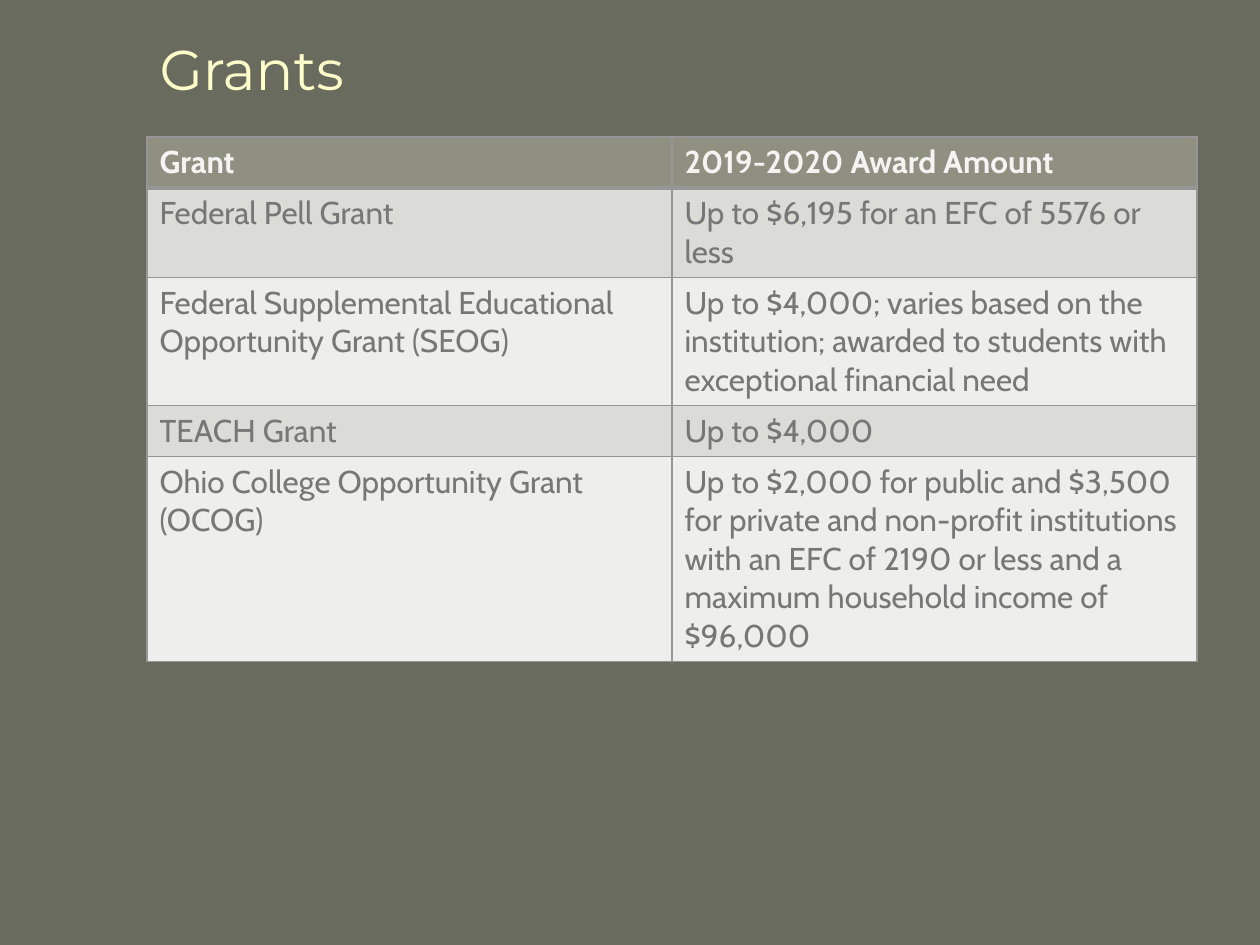
import dataclasses

import pptx
import pptx.dml.color
import pptx.enum.text
import pptx.oxml
import pptx.oxml.ns
import pptx.util

PX = 914400 / 126
WIDTH, HEIGHT = 1260, 945
LEFT = 147

ROWS = [
    ("Grant", "2019-2020 Award Amount"),
    ("Federal Pell Grant", "Up to $6,195 for an EFC of 5576 or less"),
    ("Federal Supplemental Educational Opportunity Grant (SEOG)",
     "Up to $4,000; varies based on the institution; "
     "awarded to students with exceptional financial need"),
    ("TEACH Grant", "Up to $4,000"),
    ("Ohio College Opportunity Grant (OCOG)",
     "Up to $2,000 for public and $3,500 for private and non-profit "
     "institutions with an EFC of 2190 or less and a maximum household "
     "income of $96,000"),
]
HEIGHTS = [50, 88, 126, 50, 202]
COLUMN = 525


@dataclasses.dataclass(frozen=True)
class Theme:
    back: str = "686B5D"
    title: str = "FFFFCC"
    head: str = "909082"
    label: str = "F4F4F3"
    body: str = "777777"
    bands: tuple = ("EEEEED", "DBDBD8")
    rule: str = "969696"
    title_font: str = "Montserrat"
    body_font: str = "Cabin"
    title_size: int = 32
    body_size: int = 18
    thin: int = 1
    thick: int = 3


THEME = Theme()


def px(count):
    return pptx.util.Emu(round(count * PX))


def rgb(code):
    return pptx.dml.color.RGBColor.from_string(code)


def paint(fill, color):
    fill.solid()
    fill.fore_color.rgb = rgb(color)


def write(frame, text, *, font, size, color, bold=False):
    frame.text = text
    frame.word_wrap = True
    line = frame.paragraphs[0]
    line.alignment = pptx.enum.text.PP_ALIGN.LEFT
    style = line.runs[0].font
    style.name = font
    style.size = pptx.util.Pt(size)
    style.bold = bold
    style.color.rgb = rgb(color)


def edge(cell, side, width):
    """Draw one cell border; side is L, R, T or B."""
    space = pptx.oxml.ns.nsdecls("a")
    cell._tc.get_or_add_tcPr().append(pptx.oxml.parse_xml(
        f'<a:ln{side} {space} w="{pptx.util.Pt(width)}"><a:solidFill>'
        f'<a:srgbClr val="{THEME.rule}"/></a:solidFill></a:ln{side}>'))


def add_title(slide, text):
    title = slide.shapes.title
    title.left, title.top = px(LEFT), px(21)
    title.width, title.height = px(987), px(95)
    frame = title.text_frame
    frame.vertical_anchor = pptx.enum.text.MSO_ANCHOR.MIDDLE
    write(frame, text, font=THEME.title_font, size=THEME.title_size,
          color=THEME.title)


def fill_cell(cell, text, row):
    head = row == 0
    for side in "LRTB":
        under = (row, side) in ((0, "B"), (1, "T"))
        edge(cell, side, THEME.thick if under else THEME.thin)
    paint(cell.fill, THEME.head if head else THEME.bands[row % 2])
    write(cell.text_frame, text, font=THEME.body_font, size=THEME.body_size,
          color=THEME.label if head else THEME.body, bold=head)


def add_grid(slide):
    count = len(ROWS[0])
    grid = slide.shapes.add_table(
        len(ROWS), count, px(LEFT), px(137),
        px(COLUMN * count), px(sum(HEIGHTS))).table
    for column in grid.columns:
        column.width = px(COLUMN)
    for row, (texts, height) in enumerate(zip(ROWS, HEIGHTS)):
        grid.rows[row].height = px(height)
        for col, text in enumerate(texts):
            fill_cell(grid.cell(row, col), text, row)


def main():
    deck = pptx.Presentation()
    deck.slide_width, deck.slide_height = px(WIDTH), px(HEIGHT)
    slide = deck.slides.add_slide(deck.slide_layouts[5])
    paint(slide.background.fill, THEME.back)
    add_title(slide, "Grants")
    add_grid(slide)
    deck.save("out.pptx")


if __name__ == "__main__":
    main()
